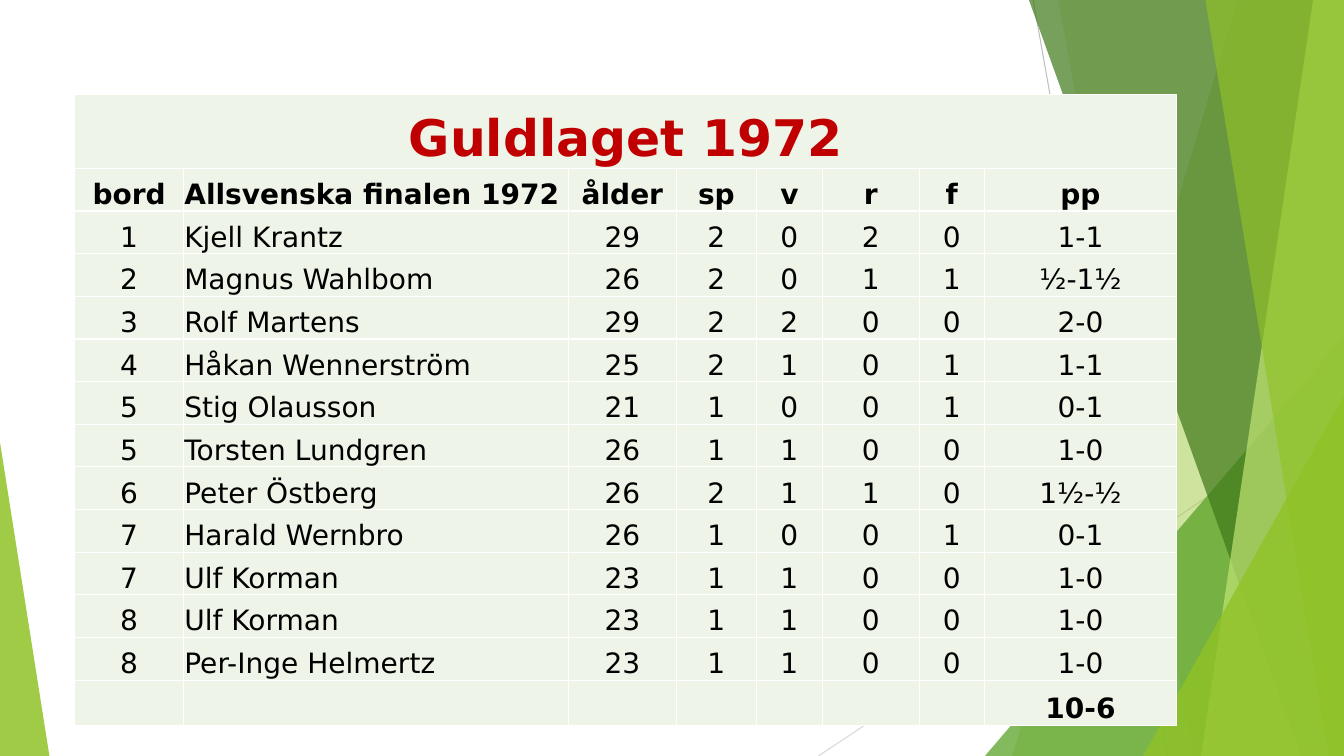
from dataclasses import dataclass

from lxml import etree
from pptx import Presentation
from pptx import util as u
from pptx.dml.color import RGBColor
from pptx.enum import shapes, text
from pptx.oxml import ns

COLOURS = {
    "lime": "90C226",
    "green": "54A021",
    "forest": "3F7819",
    "pale lime": "C0E474",
    "grey": "BFBFBF",
    "light grey": "D9D9D9",
    "cell": "EEF4E8",
    "border": "FFFFFF",
    "title": "C00000",
    "ink": "000000",
}
FONT = "DejaVu Sans"
WIDTH, HEIGHT = 960, 540


@dataclass(frozen=True)
class Ray:
    start: tuple[float, float]
    end: tuple[float, float]
    colour: str


@dataclass(frozen=True)
class Band:
    top_left: float
    bottom_left: float
    colour: str
    opacity: int


@dataclass(frozen=True)
class Wedge:
    left: float
    top: float
    width: float
    apex: float
    colour: str
    opacity: int


RAYS = [
    Ray((738, 0), (834, HEIGHT), "grey"),
    Ray((WIDTH, 290), (584.6, HEIGHT), "light grey"),
]
FACETS = [
    Band(884, 723, "lime", 30),
    Band(756, 852, "lime", 20),
    Wedge(703.5, 240, 256.5, 1, "green", 72),
    Band(735, 929.5, "forest", 70),
    Band(938, 858, "pale lime", 70),
    Band(861, 949, "lime", 65),
    Wedge(816.5, 283, 143.5, 1, "lime", 80),
    Wedge(0, 316, 35.3, 0, "lime", 85),
]

TITLE = "Guldlaget 1972"
HEADINGS = ("bord", "Allsvenska finalen 1972", "ålder", "sp", "v", "r", "f", "pp")
PLAYERS = [
    ("1", "Kjell Krantz", "29", "2", "0", "2", "0", "1-1"),
    ("2", "Magnus Wahlbom", "26", "2", "0", "1", "1", "½-1½"),
    ("3", "Rolf Martens", "29", "2", "2", "0", "0", "2-0"),
    ("4", "Håkan Wennerström", "25", "2", "1", "0", "1", "1-1"),
    ("5", "Stig Olausson", "21", "1", "0", "0", "1", "0-1"),
    ("5", "Torsten Lundgren", "26", "1", "1", "0", "0", "1-0"),
    ("6", "Peter Östberg", "26", "2", "1", "1", "0", "1½-½"),
    ("7", "Harald Wernbro", "26", "1", "0", "0", "1", "0-1"),
    ("7", "Ulf Korman", "23", "1", "1", "0", "0", "1-0"),
    ("8", "Ulf Korman", "23", "1", "1", "0", "0", "1-0"),
    ("8", "Per-Inge Helmertz", "23", "1", "1", "0", "0", "1-0"),
]
BLANKS = ("",) * 7
ROWS = [(TITLE, *BLANKS), HEADINGS, *PLAYERS, (*BLANKS, "10-6")]
COLUMN_WIDTHS = [77.5, 275, 77.3, 57, 47.3, 69, 46.7, 137.2]
ROW_HEIGHTS = [52.5] + [30.5] * 12 + [32.2]
NAME_COLUMN = 1


def rgb(colour: str) -> RGBColor:
    return RGBColor.from_string(COLOURS[colour])


def draw_ray(slide, ray: Ray) -> None:
    line = slide.shapes.add_connector(
        shapes.MSO_CONNECTOR.STRAIGHT, *map(u.Pt, ray.start + ray.end)
    )
    line.line.color.rgb = rgb(ray.colour)
    line.line.width = u.Pt(0.75)
    etree.SubElement(line._element.spPr, ns.qn("a:effectLst"))


def paint(facet, colour: str, opacity: int) -> None:
    facet.shadow.inherit = False
    facet.line.fill.background()
    facet.fill.solid()
    facet.fill.fore_color.rgb = rgb(colour)
    tint = facet._element.spPr.find(".//" + ns.qn("a:srgbClr"))
    etree.SubElement(tint, ns.qn("a:alpha"), val=str(opacity * 1000))


def draw_band(slide, band: Band) -> None:
    outline = slide.shapes.build_freeform(u.Pt(band.top_left), 0)
    corners = [(WIDTH, 0), (WIDTH, HEIGHT), (band.bottom_left, HEIGHT)]
    outline.add_line_segments([(u.Pt(x), u.Pt(y)) for x, y in corners], close=True)
    paint(outline.convert_to_shape(), band.colour, band.opacity)


def draw_wedge(slide, wedge: Wedge) -> None:
    triangle = slide.shapes.add_shape(
        shapes.MSO_SHAPE.ISOSCELES_TRIANGLE,
        u.Pt(wedge.left), u.Pt(wedge.top),
        u.Pt(wedge.width), u.Pt(HEIGHT - wedge.top),
    )
    triangle.adjustments[0] = wedge.apex
    paint(triangle, wedge.colour, wedge.opacity)


def add_borders(cell) -> None:
    properties = cell._tc.get_or_add_tcPr()
    for side in ("lnL", "lnR", "lnT", "lnB"):
        edge = etree.SubElement(properties, ns.qn(f"a:{side}"), w=str(u.Pt(1)))
        fill = etree.SubElement(edge, ns.qn("a:solidFill"))
        etree.SubElement(fill, ns.qn("a:srgbClr"), val=COLOURS["border"])


def fill_cell(cell, wording: str, row: int, column: int) -> None:
    add_borders(cell)
    cell.fill.solid()
    cell.fill.fore_color.rgb = rgb("cell")
    cell.margin_left = cell.margin_right = cell.margin_top = u.Pt(0.7)
    cell.margin_bottom = 0
    cell.vertical_anchor = text.MSO_ANCHOR.BOTTOM
    is_title = row == 0
    is_name = column == NAME_COLUMN
    cell.text = wording
    paragraph = cell.text_frame.paragraphs[0]
    paragraph.alignment = text.PP_ALIGN.LEFT if is_name else text.PP_ALIGN.CENTER
    paragraph.font.name = FONT
    paragraph.font.size = u.Pt(36 if is_title else 20)
    paragraph.font.bold = row in (0, 1, len(ROWS) - 1)
    paragraph.font.color.rgb = rgb("title" if is_title else "ink")


def draw_results(slide) -> None:
    results = slide.shapes.add_table(
        len(ROWS), len(HEADINGS), u.Pt(53.5), u.Pt(67.7),
        u.Pt(sum(COLUMN_WIDTHS)), u.Pt(sum(ROW_HEIGHTS)),
    ).table
    results.first_row = results.horz_banding = False
    for column, width in zip(results.columns, COLUMN_WIDTHS):
        column.width = u.Pt(width)
    for row, height in zip(results.rows, ROW_HEIGHTS):
        row.height = u.Pt(height)
    for r, wordings in enumerate(ROWS):
        for c, wording in enumerate(wordings):
            fill_cell(results.cell(r, c), wording, r, c)
    results.cell(0, 0).merge(results.cell(0, len(HEADINGS) - 1))


def main() -> None:
    presentation = Presentation()
    presentation.slide_width = u.Pt(WIDTH)
    presentation.slide_height = u.Pt(HEIGHT)
    slide = presentation.slides.add_slide(presentation.slide_layouts[6])
    for ray in RAYS:
        draw_ray(slide, ray)
    for facet in FACETS:
        if isinstance(facet, Band):
            draw_band(slide, facet)
        else:
            draw_wedge(slide, facet)
    draw_results(slide)
    presentation.save("out.pptx")


if __name__ == "__main__":
    main()
